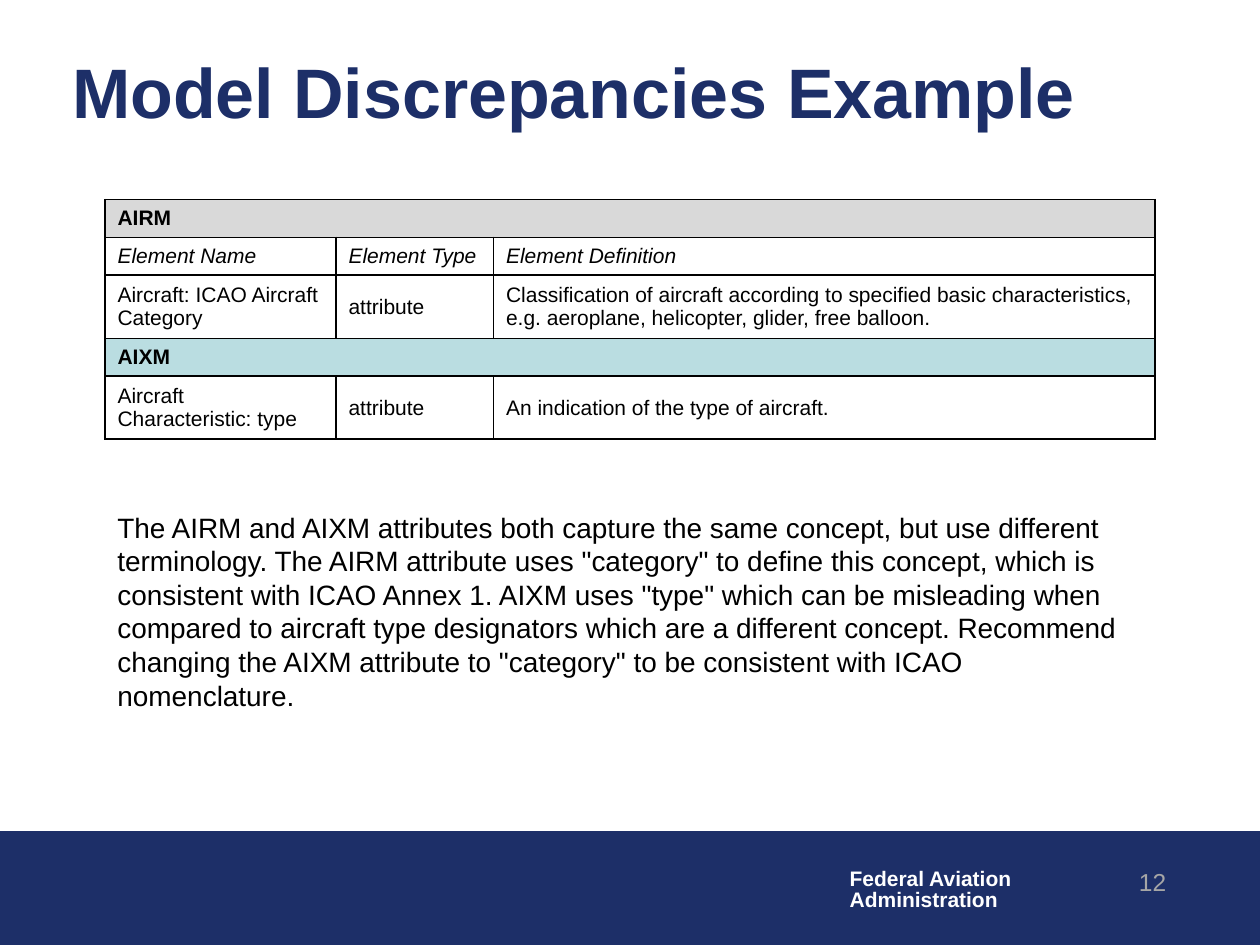
from lxml import etree
from pptx import Presentation
from pptx.dml.color import RGBColor
from pptx.enum.shapes import MSO_SHAPE
from pptx.enum.text import MSO_ANCHOR, MSO_AUTO_SIZE, PP_ALIGN
from pptx.oxml.ns import qn
from pptx.util import Pt

RECT = MSO_SHAPE.RECTANGLE
MIDDLE = MSO_ANCHOR.MIDDLE
LEFT, RIGHT = PP_ALIGN.LEFT, PP_ALIGN.RIGHT
NAVY = RGBColor(0x1D, 0x2F, 0x68)
WHITE = RGBColor(0xFF, 0xFF, 0xFF)
BLACK = RGBColor(0, 0, 0)
GRAY = RGBColor(0xD9, 0xD9, 0xD9)
TEAL = RGBColor(0xBA, 0xDD, 0xE1)
MUTED = RGBColor(0xA6, 0xA6, 0xA6)
FONT = "Arial"

TITLE = "Model Discrepancies Example"
BODY = (
    "The AIRM and AIXM attributes both capture the same concept, but use "
    'different terminology. The AIRM attribute uses "category" to define this '
    "concept, which is consistent with ICAO Annex 1. AIXM uses \"type\" which "
    "can be misleading when compared to aircraft type designators which are a "
    "different concept. Recommend changing the AIXM attribute to \"category\" "
    "to be consistent with ICAO nomenclature."
)
AGENCY = ["Federal Aviation", "Administration"]
PAGE = "12"

# Row height, fill, bold, italic, cell texts; a single text spans the row
ROWS = [
    (20.6, GRAY, True, False, ["AIRM"]),
    (20.6, None, False, True,
     ["Element Name", "Element Type", "Element Definition"]),
    (34.2, None, False, False,
     ["Aircraft: ICAO Aircraft Category", "attribute",
      "Classification of aircraft according to specified basic "
      "characteristics, e.g. aeroplane, helicopter, glider, free balloon."]),
    (20.6, TEAL, True, False, ["AIXM"]),
    (34.2, None, False, False,
     ["Aircraft Characteristic: type", "attribute",
      "An indication of the type of aircraft."]),
]
COLS = [132, 90, 378]
EDGE = 60


def write(frame, lines, size, color, bold=False, italic=False,
          align=LEFT, space=None):
    for i, line in enumerate(lines):
        para = frame.add_paragraph() if i else frame.paragraphs[0]
        para.alignment = align
        para.line_spacing = space
        run = para.add_run()
        run.text = line
        font = run.font
        font.name, font.size = FONT, Pt(size)
        font.bold, font.italic = bold, italic
        font.color.rgb = color


def add_text(slide, box, lines, size, color, wrap=True, **style):
    frame = slide.shapes.add_textbox(*map(Pt, box)).text_frame
    frame.word_wrap = wrap
    write(frame, lines, size, color, **style)
    return frame


def add_borders(cell):
    props = cell._tc.get_or_add_tcPr()
    for i, side in enumerate(("a:lnL", "a:lnR", "a:lnT", "a:lnB")):
        line = etree.Element(qn(side), w=str(Pt(1)))
        fill = etree.SubElement(line, qn("a:solidFill"))
        etree.SubElement(fill, qn("a:srgbClr"), val=str(BLACK))
        props.insert(i, line)


def add_grid(slide):
    high = sum(row[0] for row in ROWS)
    table = slide.shapes.add_table(
        len(ROWS), len(COLS), Pt(EDGE), Pt(114), Pt(sum(COLS)), Pt(high)
    ).table
    table.first_row = table.horz_banding = False
    for col, wide in zip(table.columns, COLS):
        col.width = Pt(wide)
    for r, (tall, fill, bold, italic, texts) in enumerate(ROWS):
        table.rows[r].height = Pt(tall)
        if len(texts) == 1:
            table.cell(r, 0).merge(table.cell(r, len(COLS) - 1))
        for c in range(len(COLS)):
            cell = table.cell(r, c)
            if fill:
                cell.fill.solid()
                cell.fill.fore_color.rgb = fill
            else:
                cell.fill.background()
            add_borders(cell)
            if c < len(texts):
                cell.vertical_anchor = MIDDLE
                write(cell.text_frame, [texts[c]], 12, BLACK, bold, italic)


def main():
    deck = Presentation()
    deck.slide_width, deck.slide_height = Pt(720), Pt(540)
    slide = deck.slides.add_slide(deck.slide_layouts[5])

    title = slide.shapes.title
    title.left, title.top, title.width, title.height = map(
        Pt, (34, 27.5, 667, 48))
    frame = title.text_frame
    frame.vertical_anchor = MIDDLE
    frame.auto_size = MSO_AUTO_SIZE.NONE
    write(frame, [TITLE], 40, NAVY, bold=True)

    band = slide.shapes.add_shape(RECT, 0, Pt(475), Pt(720), Pt(64.5))
    band.shadow.inherit = False
    band.fill.solid()
    band.fill.fore_color.rgb = NAVY
    band.line.color.rgb = NAVY
    band.line.width = Pt(0.75)

    agency = add_text(slide, (478.5, 493, 108, 32), AGENCY, 12, WHITE,
                      wrap=False, bold=True, space=0.85)
    agency.auto_size = MSO_AUTO_SIZE.SHAPE_TO_FIT_TEXT
    add_text(slide, (EDGE, 288, sum(COLS), 126), [BODY], 16, BLACK)
    add_grid(slide)
    add_text(slide, (587, 492, 86.5, 36), [PAGE], 14, MUTED, align=RIGHT)
    deck.save("out.pptx")


if __name__ == "__main__":
    main()
